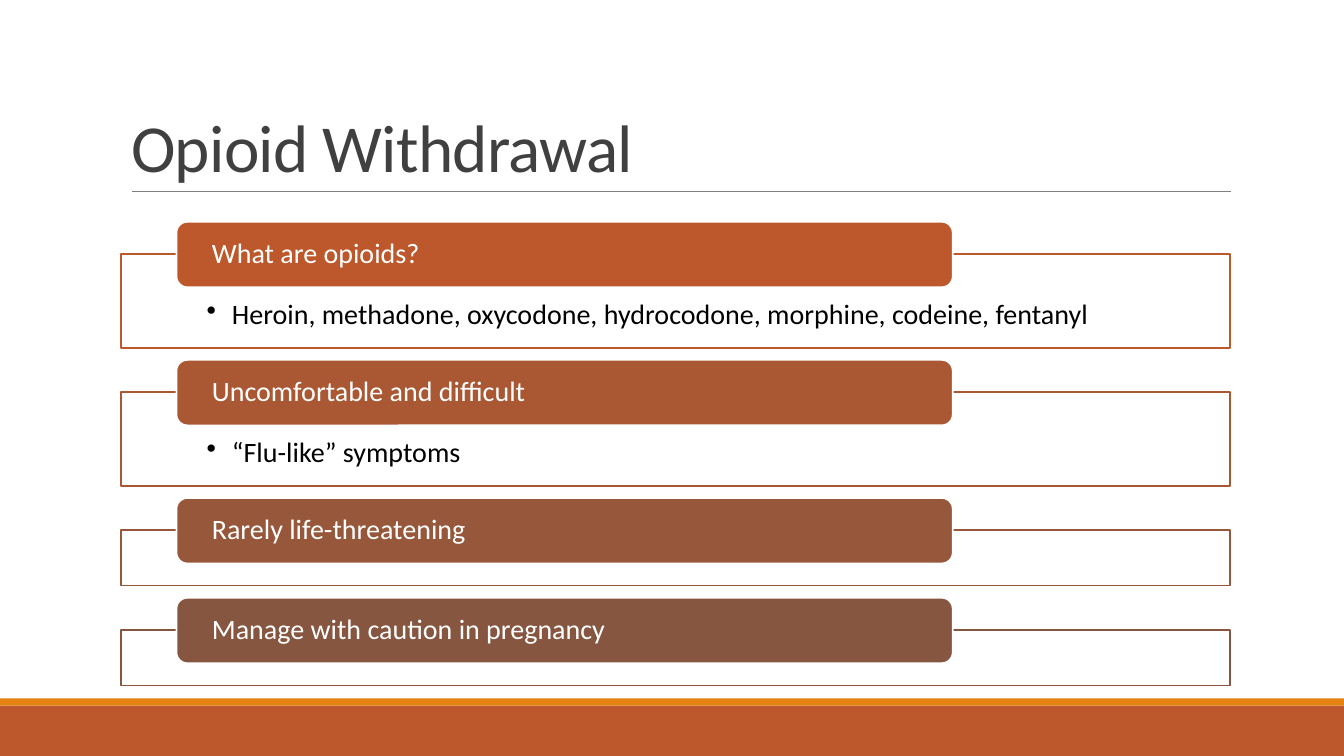
from dataclasses import dataclass

from lxml import etree
from pptx import Presentation
from pptx.dml.color import RGBColor
from pptx.enum import shapes, text
from pptx.oxml import ns
from pptx.util import Inches, Pt


@dataclass(frozen=True)
class Theme:
    font: str = "Calibri"
    title_size: float = 48
    body_size: float = 20
    title: str = "404040"
    body: str = "000000"
    white: str = "FFFFFF"
    rule: str = "808080"
    footer: str = "BD582C"
    stripe: str = "E48312"
    outline: float = 1.25


THEME = Theme()
SLIDE_WIDTH, SLIDE_HEIGHT = 13.33, 7.5
TAB_HEIGHT, TAB_RISE, GAP = 0.65, 0.32, 0.12
SECTIONS = [
    ("What are opioids?", "BD582C",
     "Heroin, methadone, oxycodone, hydrocodone, morphine, codeine, fentanyl"),
    ("Uncomfortable and difficult", "AA5834", "“Flu-like” symptoms"),
    ("Rarely life-threatening", "97573A", None),
    ("Manage with caution in pregnancy", "865640", None),
]


def color(value):
    return RGBColor.from_string(value)


def add_child(parent, tag, **attributes):
    return etree.SubElement(parent, ns.qn(tag), attributes)


def write_text(box, words, *, size, ink, anchor, insets, line_spacing=0.9,
               tracking=None, bullet=False):
    """Fill a shape with one left-aligned paragraph; insets are left, top, right, bottom."""
    frame = box.text_frame
    frame.word_wrap = True
    frame.auto_size = text.MSO_AUTO_SIZE.NONE
    frame.vertical_anchor = anchor
    (frame.margin_left, frame.margin_top,
     frame.margin_right, frame.margin_bottom) = map(Inches, insets)
    para = frame.paragraphs[0]
    para.alignment = text.PP_ALIGN.LEFT
    para.line_spacing = line_spacing
    span = para.add_run()
    span.text = words
    span.font.name = THEME.font
    span.font.size = Pt(size)
    span.font.color.rgb = color(ink)
    if tracking is not None:
        span.font._element.set("spc", str(round(tracking * 100)))
    if bullet:
        properties = para._p.get_or_add_pPr()
        properties.set("marL", str(Inches(0.25)))
        properties.set("indent", str(Inches(-0.25)))
        add_child(properties, "a:buChar", char="•")


def add_block(page, kind, left, top, width, height, fill, line=None):
    block = page.shapes.add_shape(
        kind, Inches(left), Inches(top), Inches(width), Inches(height))
    block.shadow.inherit = False
    block.fill.solid()
    block.fill.fore_color.rgb = color(fill)
    if line:
        block.line.color.rgb = color(line)
        block.line.width = Pt(THEME.outline)
    else:
        block.line.fill.background()
    return block


def add_footer(page, top, height):
    stripe = 0.07
    rectangle = shapes.MSO_SHAPE.RECTANGLE
    add_block(page, rectangle, 0, top + stripe, SLIDE_WIDTH, height - stripe, THEME.footer)
    add_block(page, rectangle, 0, top, SLIDE_WIDTH, stripe, THEME.stripe)


def add_heading(page, left, top, width, height, words):
    """Place the title with a thin rule along its lower edge."""
    title = page.shapes.title
    title.left, title.top = Inches(left), Inches(top)
    title.width, title.height = Inches(width), Inches(height)
    write_text(title, words, size=THEME.title_size, ink=THEME.title,
               anchor=text.MSO_ANCHOR.BOTTOM, insets=(0.1, 0.05, 0.1, 0.05),
               line_spacing=0.85, tracking=-0.5)
    rule_y = Inches(top + height)
    rule = page.shapes.add_connector(
        shapes.MSO_CONNECTOR.STRAIGHT,
        Inches(left + 0.11), rule_y, Inches(left + width + 0.01), rule_y)
    rule.line.color.rgb = color(THEME.rule)
    rule.line.width = Pt(0.5)
    add_child(rule._element.spPr, "a:effectLst")


def add_section(page, left, top, width, heading, accent, detail):
    """Draw a tab over an outlined panel and return the panel's bottom."""
    panel_top = top + TAB_RISE
    panel_height = 0.93 if detail else 0.55
    panel = add_block(page, shapes.MSO_SHAPE.RECTANGLE, left, panel_top,
                      width, panel_height, THEME.white, accent)
    fill_color = panel._element.spPr.find(ns.qn("a:solidFill"))[0]
    add_child(fill_color, "a:alpha", val="90000")
    if detail:
        write_text(panel, detail, size=THEME.body_size, ink=THEME.body,
                   anchor=text.MSO_ANCHOR.TOP, insets=(0.85, 0.46, 0.85, 0.16),
                   bullet=True)
    tab = add_block(page, shapes.MSO_SHAPE.ROUNDED_RECTANGLE, left + 0.55, top,
                    width * 0.7, TAB_HEIGHT, accent, THEME.white)
    write_text(tab, heading, size=THEME.body_size, ink=THEME.white,
               anchor=text.MSO_ANCHOR.MIDDLE, insets=(0.32, 0, 0.32, 0))
    return panel_top + panel_height


def add_sections(page, left, top, width):
    for section in SECTIONS:
        top = add_section(page, left, top, width, *section) + GAP


def main():
    deck = Presentation()
    deck.slide_width, deck.slide_height = Inches(SLIDE_WIDTH), Inches(SLIDE_HEIGHT)
    page = deck.slides.add_slide(deck.slide_layouts.get_by_name("Title Only"))
    add_footer(page, 6.93, 0.57)
    add_heading(page, 1.2, 0.31, 11, 1.59, "Opioid Withdrawal")
    add_sections(page, 1.2, 2.2, 11)
    deck.save("out.pptx")


if __name__ == "__main__":
    main()
